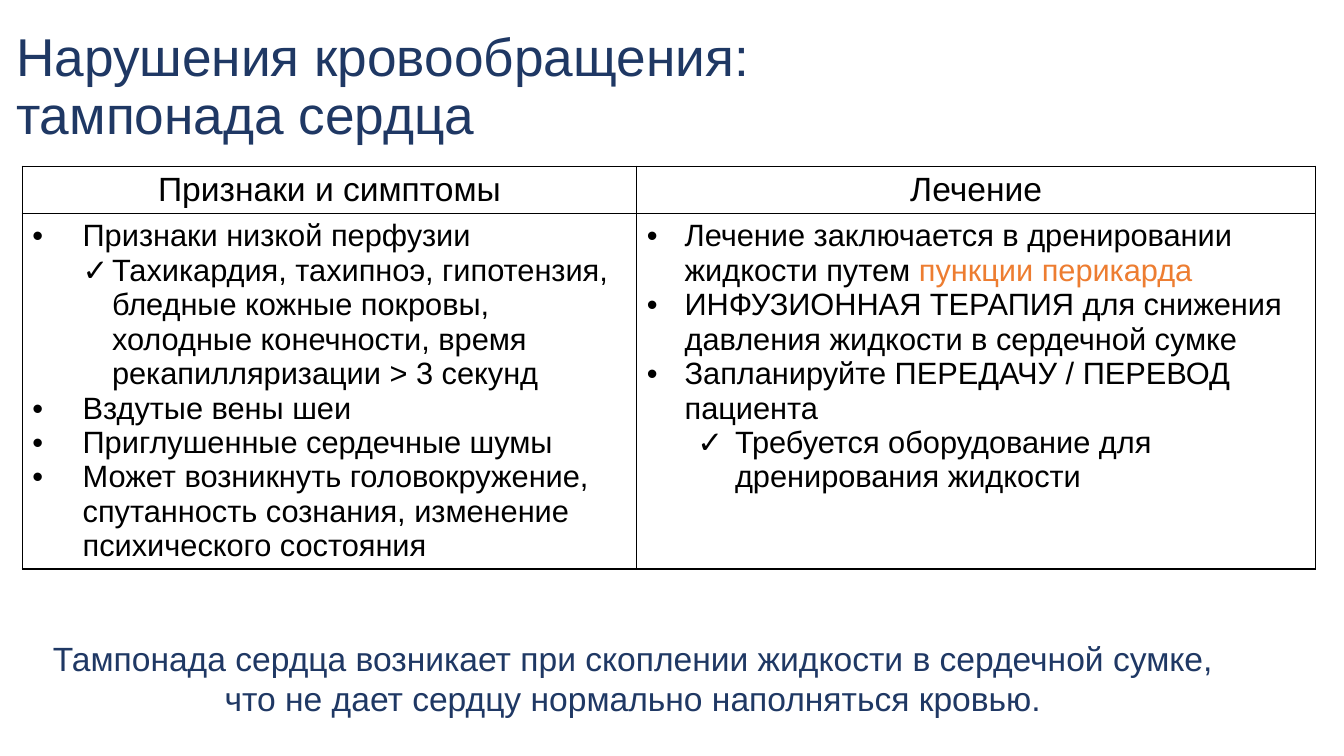
from dataclasses import dataclass

from lxml.etree import SubElement
from pptx import Presentation
from pptx.dml.color import RGBColor
from pptx.enum.text import MSO_ANCHOR, MSO_AUTO_SIZE, PP_ALIGN
from pptx.oxml.ns import qn
from pptx.util import Cm, Pt


@dataclass(frozen=True)
class Theme:
    font: str = "Arial"
    navy: str = "1F3864"
    black: str = "000000"
    orange: str = "ED7D31"
    white: str = "FFFFFF"
    title_size: int = 38
    heading_size: int = 24
    list_size: int = 22
    border_width: int = 1


@dataclass(frozen=True)
class ListStyle:
    margin: float
    hanging: float
    symbol: str
    level: int = 0


THEME = Theme()
SIGN = ListStyle(1.27, 1.27, "•")
SIGN_DETAIL = ListStyle(2.01, 0.74, "✓", 1)
TREATMENT = ListStyle(0.95, 0.95, "•")
TREATMENT_DETAIL = ListStyle(2.22, 0.95, "✓", 1)

TITLE_LINES = ["Нарушения кровообращения:", "тампонада сердца"]
HEADINGS = ["Признаки и симптомы", "Лечение"]
SIGNS = [
    (SIGN, [("Признаки низкой перфузии", THEME.black)]),
    (SIGN_DETAIL, [("Тахикардия, тахипноэ, гипотензия, бледные кожные покровы, "
                    "холодные конечности, время рекапилляризации > 3 секунд", THEME.black)]),
    (SIGN, [("Вздутые вены шеи", THEME.black)]),
    (SIGN, [("Приглушенные сердечные шумы", THEME.black)]),
    (SIGN, [("Может возникнуть головокружение, спутанность сознания, "
             "изменение психического состояния", THEME.black)]),
]
TREATMENTS = [
    (TREATMENT, [("Лечение заключается в дренировании жидкости путем ", THEME.black),
                 ("пункции перикарда", THEME.orange)]),
    (TREATMENT, [("ИНФУЗИОННАЯ ТЕРАПИЯ для снижения давления жидкости "
                  "в сердечной сумке", THEME.black)]),
    (TREATMENT, [("Запланируйте ПЕРЕДАЧУ / ПЕРЕВОД пациента", THEME.black)]),
    (TREATMENT_DETAIL, [("Требуется оборудование для дренирования жидкости", THEME.black)]),
]
SUMMARY = ("Тампонада сердца возникает при скоплении жидкости в сердечной сумке, "
           "что не дает сердцу нормально наполняться кровью.")


def add_span(para, text, size, color):
    span = para.add_run()
    span.text = text
    span.font.name = THEME.font
    span.font.size = Pt(size)
    span.font.bold = False
    span.font.color.rgb = RGBColor.from_string(color)


def set_bullet(para, style):
    para.level = style.level
    properties = para._p.get_or_add_pPr()
    properties.set("marL", str(Cm(style.margin)))
    properties.set("indent", str(-Cm(style.hanging)))
    color = SubElement(properties, qn("a:buClr"))
    SubElement(color, qn("a:srgbClr"), val=THEME.black)
    SubElement(properties, qn("a:buFont"), typeface=THEME.font)
    SubElement(properties, qn("a:buChar"), char=style.symbol)


def set_borders(cell):
    properties = cell._tc.get_or_add_tcPr()
    for position, side in enumerate(("a:lnL", "a:lnR", "a:lnT", "a:lnB")):
        line = SubElement(properties, qn(side), w=str(Pt(THEME.border_width)))
        fill = SubElement(line, qn("a:solidFill"))
        SubElement(fill, qn("a:srgbClr"), val=THEME.black)
        properties.insert(position, line)


def fill_title(page, left, top, width, height):
    box = page.shapes.title
    box.left, box.top, box.width, box.height = left, top, width, height
    frame = box.text_frame
    frame.word_wrap = True
    frame.auto_size = MSO_AUTO_SIZE.NONE
    frame.vertical_anchor = MSO_ANCHOR.MIDDLE
    para = frame.paragraphs[0]
    para.alignment = PP_ALIGN.LEFT
    para.line_spacing = 0.9
    for number, line in enumerate(TITLE_LINES):
        if number:
            para.add_line_break()
        add_span(para, line, THEME.title_size, THEME.navy)


def fill_list(cell, items):
    frame = cell.text_frame
    for number, (style, spans) in enumerate(items):
        para = frame.add_paragraph() if number else frame.paragraphs[0]
        set_bullet(para, style)
        for text, color in spans:
            add_span(para, text, THEME.list_size, color)


def add_comparison(page, left, top, width, height):
    table = page.shapes.add_table(2, 2, left, top, width, height).table
    table.first_row = False
    table.horz_banding = False
    table.columns[0].width = Cm(15.49)
    table.columns[1].width = width - Cm(15.49)
    table.rows[0].height = Cm(1.18)
    table.rows[1].height = height - Cm(1.18)
    for cell in table.iter_cells():
        cell.fill.solid()
        cell.fill.fore_color.rgb = RGBColor.from_string(THEME.white)
        set_borders(cell)
    for column, (heading, items) in enumerate(zip(HEADINGS, (SIGNS, TREATMENTS))):
        para = table.cell(0, column).text_frame.paragraphs[0]
        para.alignment = PP_ALIGN.CENTER
        add_span(para, heading, THEME.heading_size, THEME.black)
        fill_list(table.cell(1, column), items)


def add_summary(page, left, top, width, height):
    frame = page.shapes.add_textbox(left, top, width, height).text_frame
    frame.word_wrap = True
    frame.auto_size = MSO_AUTO_SIZE.SHAPE_TO_FIT_TEXT
    para = frame.paragraphs[0]
    para.alignment = PP_ALIGN.CENTER
    add_span(para, SUMMARY, THEME.heading_size, THEME.navy)


def main():
    deck = Presentation()
    deck.slide_width, deck.slide_height = Cm(33.87), Cm(19.05)
    page = deck.slides.add_slide(deck.slide_layouts[5])
    fill_title(page, Cm(0.15), Cm(0.25), Cm(26.11), Cm(3.94))
    add_comparison(page, Cm(0.56), Cm(4.19), Cm(32.59), Cm(10.13))
    add_summary(page, Cm(0.56), Cm(15.95), Cm(30.78), Cm(2.18))
    deck.save("out.pptx")


if __name__ == "__main__":
    main()
